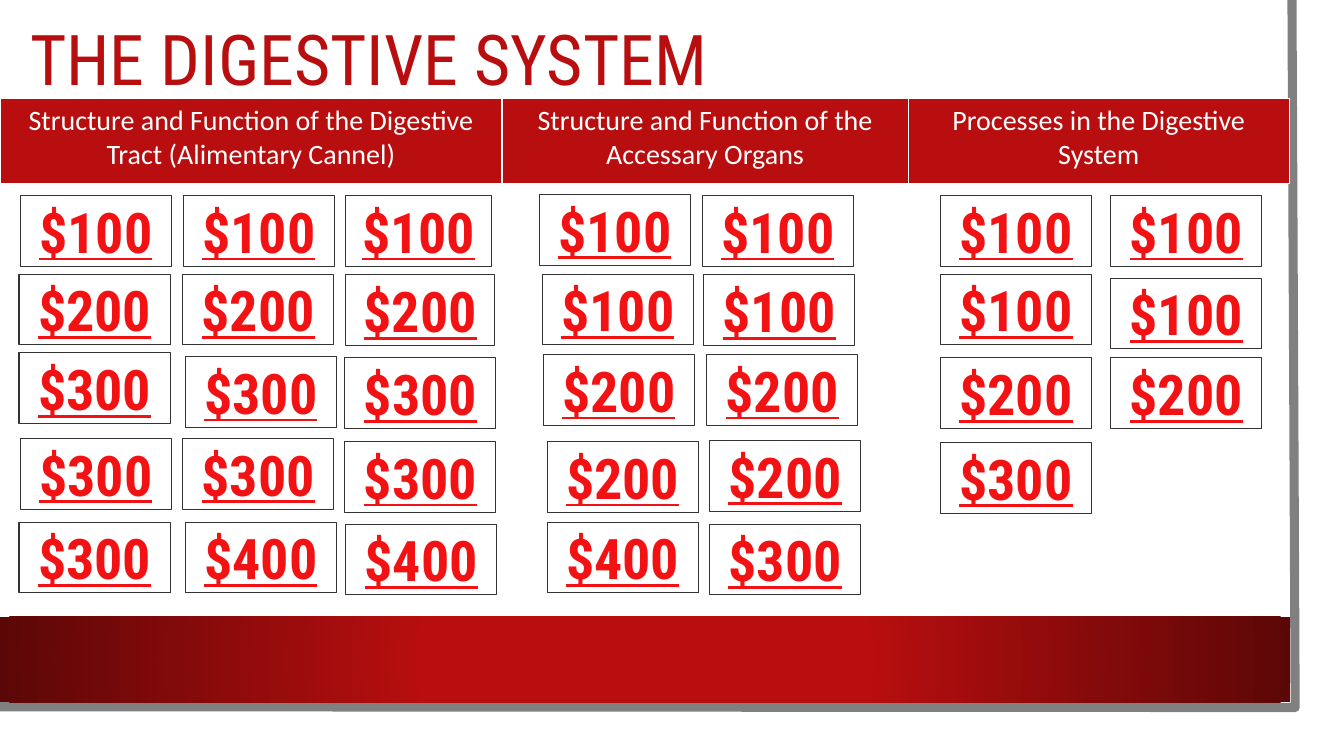
from lxml import etree
from pptx import Presentation
from pptx.dml.color import RGBColor
from pptx.enum.shapes import MSO_SHAPE
from pptx.enum.text import MSO_ANCHOR, PP_ALIGN
from pptx.oxml import parse_xml
from pptx.oxml.ns import nsdecls
from pptx.util import Cm, Pt

RECTANGLE = MSO_SHAPE.RECTANGLE
MIDDLE = MSO_ANCHOR.MIDDLE
CENTER = PP_ALIGN.CENTER

COLORS = {
    "white": "FFFFFF",
    "red": "B80E0F",
    "dark_red": "5C0707",
    "amount": "F21213",
    "outline": "333333",
    "edge": "808080",
}
TITLE_FONT = {"name": "Roboto Condensed", "size": Pt(50)}
HEADER_FONT = {"name": "Calibri", "size": Pt(20), "bold": False}
AMOUNT_FONT = {"name": "Roboto Condensed", "size": Pt(40), "bold": True, "underline": True}

# Category heading and its column width in cm
CATEGORIES = [
    ("Structure and Function of the Digestive Tract (Alimentary Cannel)", 12.65),
    ("Structure and Function of the Accessary Organs", 10.24),
    ("Processes in the Digestive System", 9.6),
]
TILE_WIDTH, TILE_HEIGHT = 3.81, 1.78
# One list per column of tiles: left, top (cm), amount, and a width where it differs
TILE_COLUMNS = [
    [(0.51, 4.93, 100), (0.48, 6.91, 200), (0.48, 8.89, 300),
     (0.51, 11.05, 300), (0.48, 13.16, 300)],
    [(4.62, 4.93, 100), (4.6, 6.91, 200), (4.67, 8.99, 300),
     (4.6, 11.05, 300), (4.67, 13.16, 400)],
    [(8.71, 4.93, 100, 3.68), (8.71, 6.93, 200, 3.76), (8.69, 9.02, 300),
     (8.69, 11.13, 300), (8.71, 13.21, 400)],
    [(13.59, 4.9, 100), (13.67, 6.91, 100), (13.69, 8.94, 200),
     (13.79, 11.13, 200), (13.79, 13.16, 400)],
    [(17.7, 4.93, 100), (17.73, 6.93, 100), (17.81, 8.94, 200),
     (17.88, 11.1, 200), (17.88, 13.21, 300)],
    [(23.7, 4.93, 100), (23.7, 6.91, 100), (23.7, 9.02, 200), (23.7, 11.15, 300)],
    [(27.99, 4.93, 100), (27.99, 7.01, 100), (27.99, 9.02, 200)],
]


def rgb(name):
    return RGBColor.from_string(COLORS[name])


def write(paragraph, text, font_format, color):
    paragraph.text = text
    font = paragraph.runs[0].font
    for attribute, value in font_format.items():
        setattr(font, attribute, value)
    font.color.rgb = rgb(color)


def add_rectangle(slide, left, top, width, height, fill, line=None):
    shape = slide.shapes.add_shape(RECTANGLE, Cm(left), Cm(top), Cm(width), Cm(height))
    shape.shadow.inherit = False
    shape.fill.solid()
    shape.fill.fore_color.rgb = rgb(fill)
    if line:
        shape.line.color.rgb = rgb(line)
        shape.line.width = Pt(0.75)
    else:
        shape.line.fill.background()
    return shape


def add_page_edge(slide):
    """Draw the grey line along the right and bottom of the page."""
    builder = slide.shapes.build_freeform(Cm(32.56), Cm(0))
    builder.add_line_segments([(Cm(32.64), Cm(17.83)), (Cm(-0.08), Cm(17.81))], close=False)
    edge = builder.convert_to_shape()
    edge.shadow.inherit = False
    edge.fill.background()
    edge.line.color.rgb = rgb("edge")
    edge.line.width = Pt(6.5)


def add_gradient_band(slide):
    band = add_rectangle(slide, 0, 15.54, 32.51, 2.16, "red")
    properties = band.fill._xPr
    gradient = parse_xml(f"<a:gradFill {nsdecls('a')} rotWithShape='1'><a:gsLst/></a:gradFill>")
    namespace = f"{{{gradient.nsmap['a']}}}"
    for position, color in ((34000, "red"), (100000, "dark_red")):
        stop = etree.SubElement(gradient[0], namespace + "gs", pos=str(position))
        etree.SubElement(stop, namespace + "srgbClr", val=COLORS[color])
    path = etree.SubElement(gradient, namespace + "path")
    path.set("path", "circle")
    etree.SubElement(path, namespace + "fillToRect", l="50000", t="50000", r="50000", b="50000")
    solid = properties.find(namespace + "solidFill")
    properties.replace(solid, gradient)


def add_title(slide, text):
    frame = slide.shapes.add_textbox(Cm(0.51), Cm(0.64), Cm(24.38), Cm(2.03)).text_frame
    frame.word_wrap = True
    frame.vertical_anchor = MIDDLE
    frame.paragraphs[0].line_spacing = 0.8
    write(frame.paragraphs[0], text, TITLE_FONT, "red")


def add_category_table(slide):
    total = sum(width for _, width in CATEGORIES)
    table = slide.shapes.add_table(
        1, len(CATEGORIES), Cm(0), Cm(2.49), Cm(total), Cm(2.13)).table
    for index, (heading, width) in enumerate(CATEGORIES):
        table.columns[index].width = Cm(width)
        cell = table.cell(0, index)
        cell.fill.solid()
        cell.fill.fore_color.rgb = rgb("red")
        paragraph = cell.text_frame.paragraphs[0]
        paragraph.alignment = CENTER
        write(paragraph, heading, HEADER_FONT, "white")


def add_tile(slide, left, top, amount, width=TILE_WIDTH):
    tile = add_rectangle(slide, left, top, width, TILE_HEIGHT, "white", "outline")
    frame = tile.text_frame
    for side in ("left", "top", "right", "bottom"):
        setattr(frame, f"margin_{side}", 0)
    frame.vertical_anchor = MIDDLE
    frame.paragraphs[0].alignment = CENTER
    write(frame.paragraphs[0], f"${amount}", AMOUNT_FONT, "amount")


def main():
    presentation = Presentation()
    presentation.slide_width = Cm(33.87)
    presentation.slide_height = Cm(19.05)
    slide = presentation.slides.add_slide(presentation.slide_layouts[6])
    add_rectangle(slide, 0, 0, 33.27, 18.47, "white")
    add_page_edge(slide)
    add_gradient_band(slide)
    add_title(slide, "THE DIGESTIVE SYSTEM")
    add_category_table(slide)
    for column in TILE_COLUMNS:
        for tile in column:
            add_tile(slide, *tile)
    presentation.save("out.pptx")


if __name__ == "__main__":
    main()
